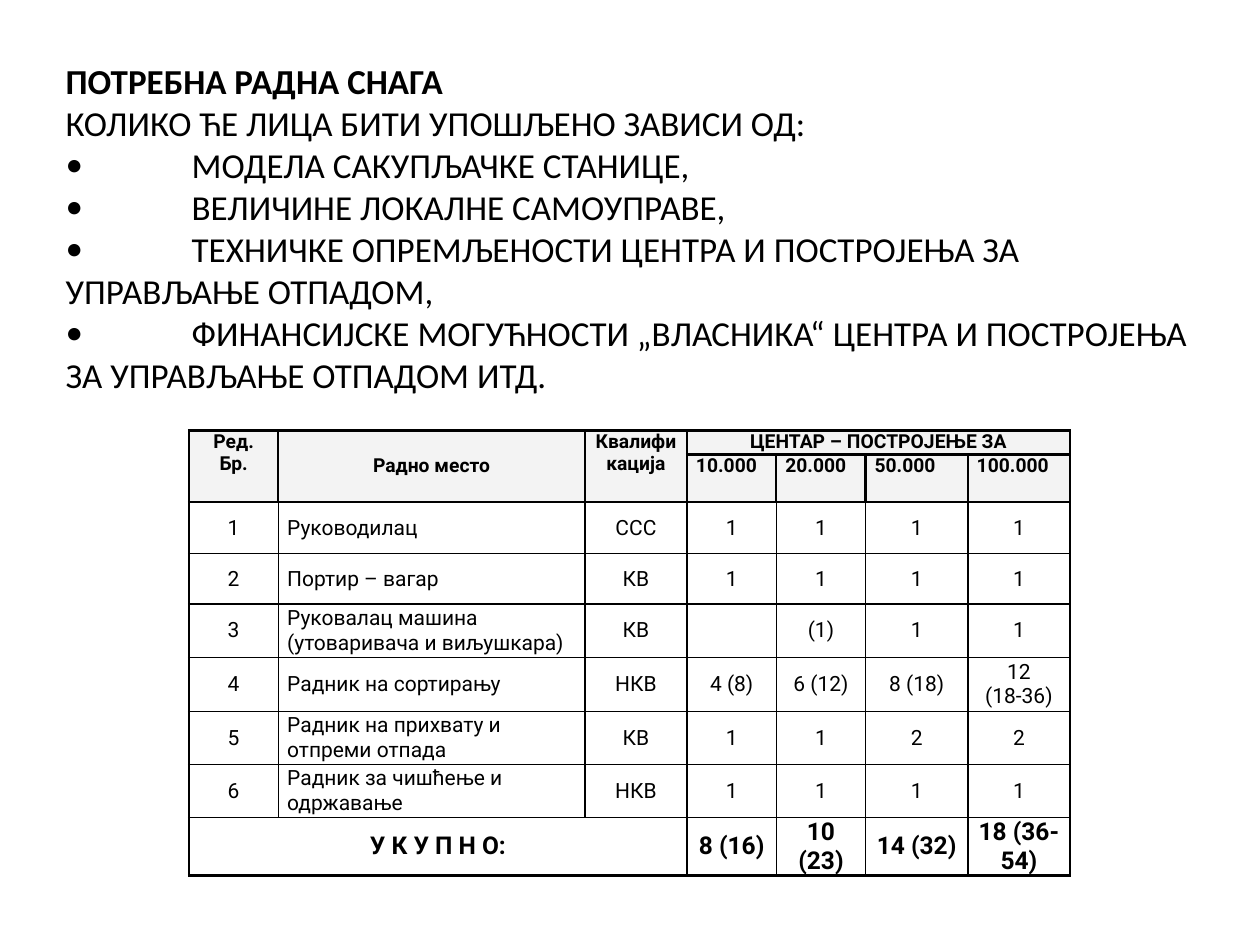
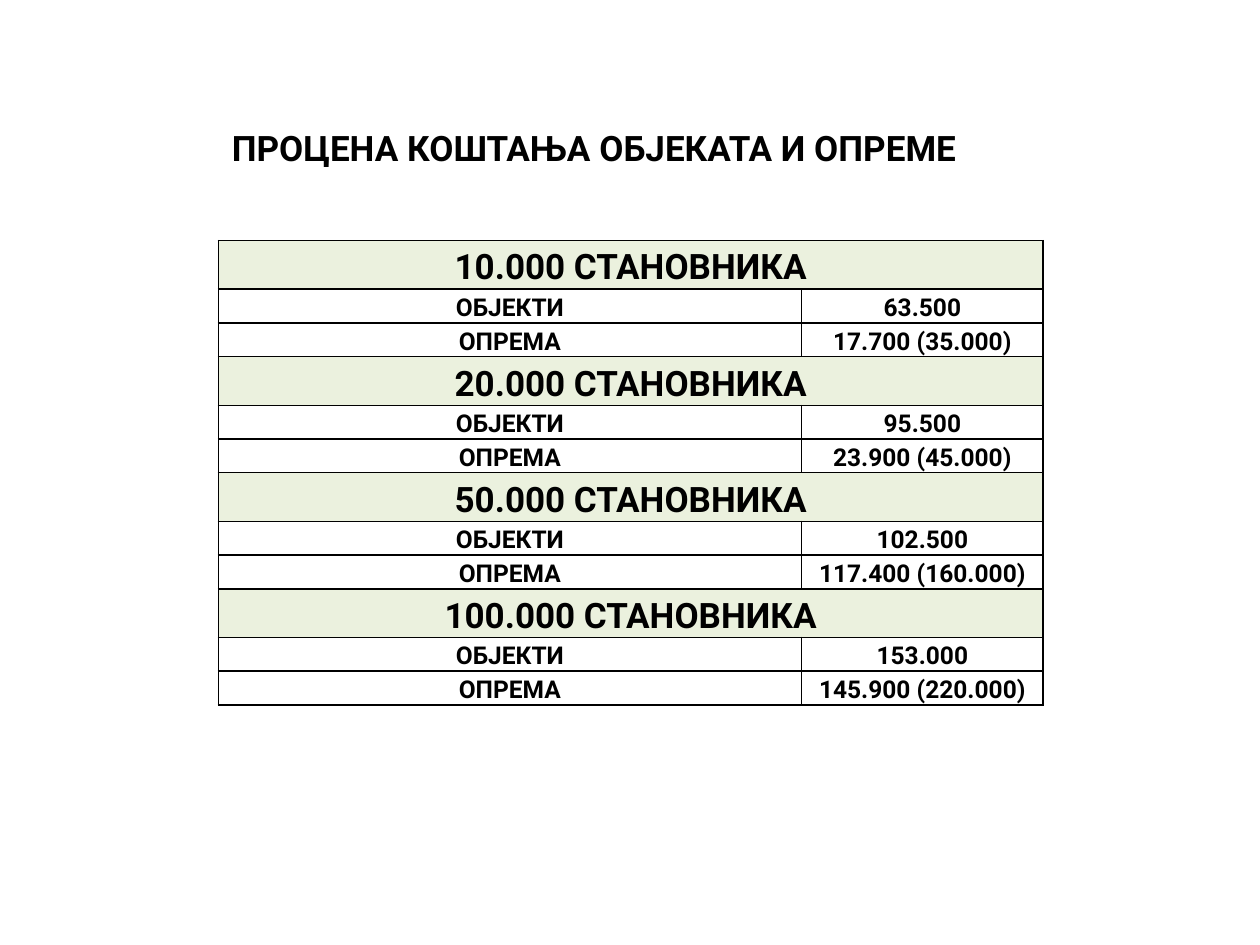
from lxml.etree import SubElement
from pptx import Presentation
from pptx.dml.color import RGBColor
from pptx.enum.text import MSO_ANCHOR, MSO_AUTO_SIZE, PP_ALIGN
from pptx.oxml import parse_xml
from pptx.oxml.ns import nsdecls, qn
from pptx.util import Cm, Pt

# Shared look
BLACK = RGBColor(0x00, 0x00, 0x00)
HEADER_GREY = RGBColor(0xF3, 0xF3, 0xF3)
GROUP_GREEN = RGBColor(0xEB, 0xF1, 0xDE)
TEXT_FONT, TABLE_FONT = "Calibri", "Roboto"
THIN, HEAVY = 1, 1.5
CELL_MARGIN = Cm(0.18)

# Workforce slide
FACTORS = [
    "МОДЕЛА САКУПЉАЧКЕ СТАНИЦЕ,",
    "ВЕЛИЧИНЕ ЛОКАЛНЕ САМОУПРАВЕ,",
    "ТЕХНИЧКЕ ОПРЕМЉЕНОСТИ ЦЕНТРА И ПОСТРОЈЕЊА ЗА УПРАВЉАЊЕ ОТПАДОМ,",
    "ФИНАНСИЈСКЕ МОГУЋНОСТИ „ВЛАСНИКА“ ЦЕНТРА И ПОСТРОЈЕЊА ЗА УПРАВЉАЊЕ ОТПАДОМ ИТД.",
]
HEADER_ROWS = 2
FIRST_CENTRE_COLUMN = 3
WORKFORCE = [
    ["Ред.\nБр.", "Радно место", "Квалификација", "ЦЕНТАР – ПОСТРОЈЕЊЕ ЗА", "", "", ""],
    ["", "", "", "10.000", "20.000", "50.000", "100.000"],
    ["1", "Руководилац", "ССС", "1", "1", "1", "1"],
    ["2", "Портир – вагар", "КВ", "1", "1", "1", "1"],
    ["3", "Руковалац машина (утоваривача и виљушкара)", "КВ", "", "(1)", "1", "1"],
    ["4", "Радник на сортирању", "НКВ", "4 (8)", "6 (12)", "8 (18)", "12\n(18-36)"],
    ["5", "Радник на прихвату и отпреми отпада", "КВ", "1", "1", "2", "2"],
    ["6", "Радник за чишћење и одржавање", "НКВ", "1", "1", "1", "1"],
    ["У К У П Н О:", "", "", "8 (16)", "10 (23)", "14 (32)", "18 (36-54)"],
]
WORKFORCE_COLUMNS = [1.8, 6.18, 2.06, 1.8, 1.8, 2.06, 2.06]
WORKFORCE_ROWS = [0.48, 0.96, 1.04, 1.02, 1.07, 1.09, 1.07, 1.07, 1.09]

# Cost slide: inhabitants, buildings, equipment
COSTS = [
    ("10.000", "63.500", "17.700 (35.000)"),
    ("20.000", "95.500", "23.900 (45.000)"),
    ("50.000", "102.500", "117.400 (160.000)"),
    ("100.000", "153.000", "145.900 (220.000)"),
]
COST_COLUMNS = [11.76, 4.87]
GROUP_HEIGHT, ITEM_HEIGHT = 0.98, 0.68


def format_text(text_frame, font, size, bold, align):
    for para in text_frame.paragraphs:
        para.alignment = align
        para.space_before = Pt(0)
        for span in para.runs:
            span.font.name = font
            span.font.size = Pt(size)
            span.font.bold = bold
            span.font.color.rgb = BLACK


def place(shape, box, anchor):
    shape.left, shape.top, shape.width, shape.height = (Cm(length) for length in box)
    frame = shape.text_frame
    frame.word_wrap = True
    frame.auto_size = MSO_AUTO_SIZE.NONE
    frame.vertical_anchor = anchor
    return frame


def add_title(page, box, text, font, anchor, align):
    frame = place(page.shapes.title, box, anchor)
    frame.text = text
    format_text(frame, font, 20, True, align)


def set_borders(cell, left, right, top, bottom):
    properties = cell._tc.get_or_add_tcPr()
    sides = zip(("lnL", "lnR", "lnT", "lnB"), (left, right, top, bottom))
    for index, (side, width) in enumerate(sides):
        properties.insert(index, parse_xml(
            f'<a:{side} {nsdecls("a")} w="{Pt(width)}"><a:solidFill>'
            f'<a:srgbClr val="{BLACK}"/></a:solidFill></a:{side}>'))


def fill_cell(cell, text, size, bold, align=PP_ALIGN.CENTER,
              anchor=MSO_ANCHOR.MIDDLE, color=None):
    cell.text_frame.text = text
    cell.margin_left = cell.margin_right = CELL_MARGIN
    cell.margin_top = cell.margin_bottom = 0
    cell.vertical_anchor = anchor
    if color is None:
        cell.fill.background()
    else:
        cell.fill.solid()
        cell.fill.fore_color.rgb = color
    format_text(cell.text_frame, TABLE_FONT, size, bold, align)


def add_grid(page, left, top, columns, rows):
    table = page.shapes.add_table(len(rows), len(columns), Cm(left), Cm(top),
                                  Cm(sum(columns)), Cm(sum(rows))).table
    table.first_row = table.horz_banding = False
    for column, width in zip(table.columns, columns):
        column.width = Cm(width)
    for row, height in zip(table.rows, rows):
        row.height = Cm(height)
    return table


def add_factor_list(page, box):
    frame = place(page.placeholders[1], box, MSO_ANCHOR.TOP)
    frame.text = "\n".join(["КОЛИКО ЋЕ ЛИЦА БИТИ УПОШЉЕНО ЗАВИСИ ОД:"]
                           + ["\t" + factor for factor in FACTORS])
    format_text(frame, TEXT_FONT, 20, False, PP_ALIGN.LEFT)
    for index, para in enumerate(frame.paragraphs):
        properties = para._p.get_or_add_pPr()
        properties.set("marL", "0")
        properties.set("indent", "0")
        if index == 0:
            SubElement(properties, qn("a:buNone"))
            continue
        # Bullet at the margin, first line starting at the tab stop
        SubElement(properties, qn("a:buFont"), typeface=TEXT_FONT)
        SubElement(properties, qn("a:buChar"), char="•")
        tabs = SubElement(properties, qn("a:tabLst"))
        SubElement(tabs, qn("a:tab"), pos=str(Cm(2.54)), algn="l")


def workforce_style(row, column):
    if row < HEADER_ROWS:
        return dict(
            size=11, bold=True, color=HEADER_GREY,
            align=PP_ALIGN.JUSTIFY if row == 1 else PP_ALIGN.CENTER,
            anchor=MSO_ANCHOR.MIDDLE if column == 1 else MSO_ANCHOR.TOP)
    if row == len(WORKFORCE) - 1:
        return dict(size=14, bold=True)
    return dict(size=12, bold=False,
                align=PP_ALIGN.LEFT if column == 1 else PP_ALIGN.CENTER)


def add_workforce_table(page, left, top):
    table = add_grid(page, left, top, WORKFORCE_COLUMNS, WORKFORCE_ROWS)
    last_row, last_column = len(WORKFORCE_ROWS) - 1, len(WORKFORCE_COLUMNS) - 1
    for row, texts in enumerate(WORKFORCE):
        header = row < HEADER_ROWS
        for column, text in enumerate(texts):
            cell = table.cell(row, column)
            fill_cell(cell, text, **workforce_style(row, column))
            heavy_sides = (
                header or column == 0,
                header or column == last_column,
                header,
                row == last_row or (row == 0 and column >= FIRST_CENTRE_COLUMN),
            )
            set_borders(cell, *(HEAVY if heavy else THIN for heavy in heavy_sides))
    for column in range(FIRST_CENTRE_COLUMN):
        table.cell(0, column).merge(table.cell(1, column))
    table.cell(0, FIRST_CENTRE_COLUMN).merge(table.cell(0, last_column))
    table.cell(last_row, 0).merge(table.cell(last_row, FIRST_CENTRE_COLUMN - 1))


def add_cost_table(page, left, top):
    rows = [GROUP_HEIGHT, ITEM_HEIGHT, ITEM_HEIGHT] * len(COSTS)
    table = add_grid(page, left, top, COST_COLUMNS, rows)
    texts = []
    for inhabitants, buildings, equipment in COSTS:
        texts += [(f"{inhabitants} СТАНОВНИКА", ""),
                  ("ОБЈЕКТИ", buildings), ("ОПРЕМА", equipment)]
    for row, pair in enumerate(texts):
        group = row % 3 == 0
        for column, text in enumerate(pair):
            cell = table.cell(row, column)
            fill_cell(cell, text, 20 if group else 14, True,
                      color=GROUP_GREEN if group else None)
            cell.text_frame.paragraphs[0].line_spacing = 1.15
            set_borders(cell, THIN, THIN, THIN, THIN)
        if group:
            # An empty merged cell must not stretch the row
            table.cell(row, 1).text_frame.paragraphs[0].font.size = Pt(14)
            table.cell(row, 0).merge(table.cell(row, 1))


def build_workforce_slide(deck):
    page = deck.slides.add_slide(deck.slide_layouts[1])
    add_title(page, (1.07, 1.07, 23.5, 1.1), "ПОТРЕБНА РАДНА СНАГА",
              TEXT_FONT, MSO_ANCHOR.TOP, PP_ALIGN.LEFT)
    add_factor_list(page, (1.07, 1.91, 23.5, 6.24))
    add_workforce_table(page, 3.81, 8.68)


def build_cost_slide(deck):
    page = deck.slides.add_slide(deck.slide_layouts[5])
    add_title(page, (4.42, 2.42, 16.3, 1.11), "ПРОЦЕНА КОШТАЊА ОБЈЕКАТА И ОПРЕМЕ",
              TABLE_FONT, MSO_ANCHOR.MIDDLE, PP_ALIGN.JUSTIFY)
    add_cost_table(page, 4.4, 4.85)


def main():
    deck = Presentation()
    deck.slide_width, deck.slide_height = Cm(25.4), Cm(19.05)
    build_workforce_slide(deck)
    build_cost_slide(deck)
    deck.save("out.pptx")


if __name__ == "__main__":
    main()
